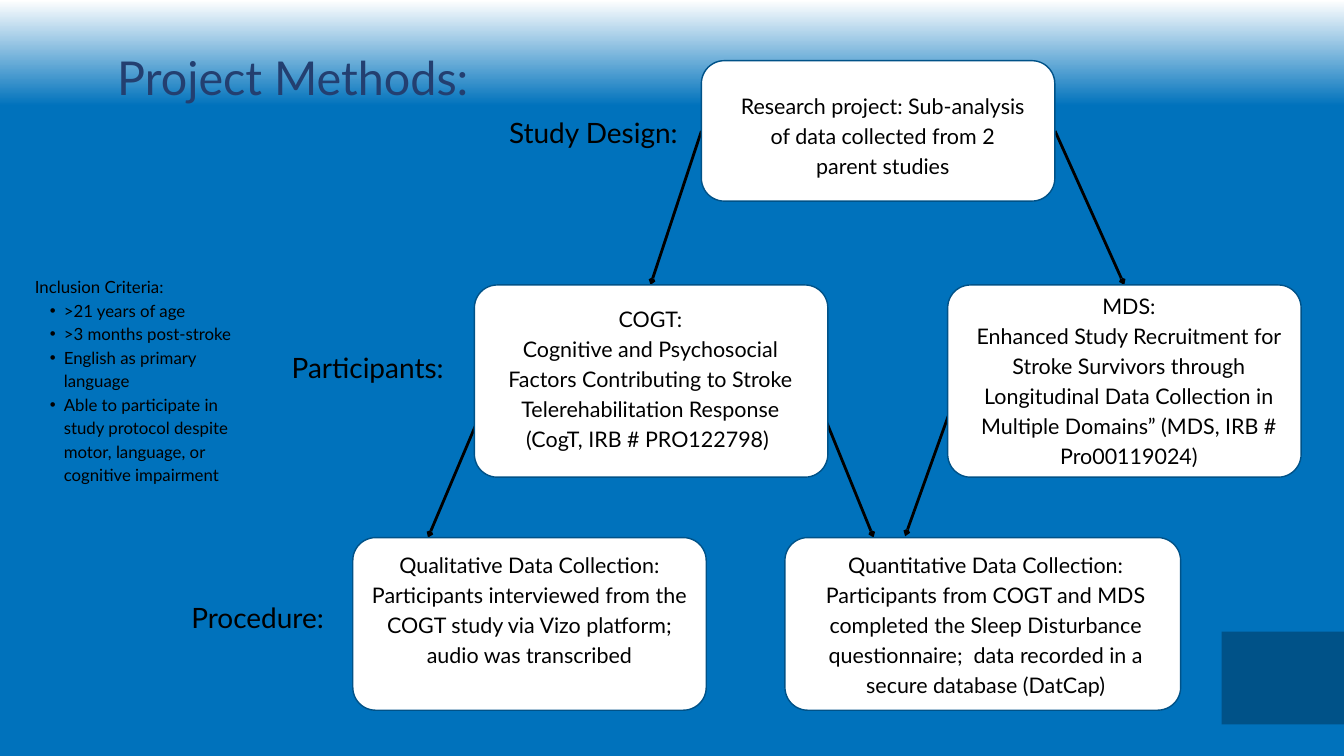
import pptx
import pptx.util
from dataclasses import dataclass
from lxml import etree
from pptx.dml.color import RGBColor
from pptx.enum.shapes import MSO_CONNECTOR, MSO_SHAPE
from pptx.enum.text import MSO_ANCHOR, MSO_AUTO_SIZE, PP_ALIGN
from pptx.oxml.ns import qn

Pt = pptx.util.Pt


@dataclass(frozen=True)
class Theme:
    font: str = "Lato"
    blue: str = "0072BC"
    deep: str = "005288"
    navy: str = "233F70"
    white: str = "FFFFFF"
    black: str = "000000"
    title: float = 50
    label: float = 30
    body: float = 23
    note: float = 18
    lead: float = 1.4  # line height as a share of type size
    round: float = 24.5


THEME = Theme()
CARD = 378.7  # width of a common box

# Each card: box (left, top, width, height), text (left, top, width), lines
CARDS = [
    ((751.5, 65, CARD, 150.5), (792, 95, 308),
     ["Research project: Sub-analysis of data collected from 2 parent studies"]),
    ((508.3, 305.3, CARD, 206), (527.8, 323.3, 338.4),
     ["COGT:", "Cognitive and Psychosocial Factors Contributing to Stroke "
      "Telerehabilitation Response (CogT, IRB # PRO122798) "]),
    ((1015.4, 305.3, CARD, 206), (1030.3, 308.9, 358.6),
     ["MDS:", "Enhanced Study Recruitment for Stroke Survivors through "
      "Longitudinal Data Collection in Multiple Domains” "
      "(MDS, IRB # Pro00119024)"]),
    ((841, 576, 424, 185), (866.9, 586.8, CARD),
     ["Quantitative Data Collection: Participants from COGT and MDS completed "
      "the Sleep Disturbance questionnaire;  data recorded in a secure "
      "database (DatCap)"]),
    ((378, 576, CARD, 185), (398.2, 586.8, 338.4),
     ["Qualitative Data Collection: Participants interviewed from the COGT "
      "study via Vizo platform; audio was transcribed"]),
]

ARROWS = [
    (751.5, 140.4, 697, 305.3),
    (1130.4, 140.4, 1204.6, 305.3),
    (512.6, 448.6, 458.6, 576),
    (877.7, 432.7, 936, 576),
    (1028.9, 409.7, 969.8, 574.6),
]

LABELS = [
    ("Study Design:", 535, 118, 201.6),
    ("Participants: ", 301, 370, 193.7),
    ("Procedure:", 195, 637.2, 162),
]

RULES = [
    ">21 years of age",
    ">3 months post-stroke",
    "English as primary language",
    "Able to participate in study protocol despite motor, language, "
    "or cognitive impairment",
]


def tint(code):
    return RGBColor.from_string(code)


def style(para, size, color=THEME.black, align=PP_ALIGN.CENTER):
    para.alignment = align
    para.line_spacing = Pt(round(size * THEME.lead, 1))
    para.space_before = para.space_after = Pt(0)
    para.font.size = Pt(size)
    para.font.name = THEME.font
    para.font.color.rgb = tint(color)


def place(shape, left, top, width, height):
    shape.left, shape.top = Pt(left), Pt(top)
    shape.width, shape.height = Pt(width), Pt(height)


def clear(frame):
    """Make a frame wrap from its top left corner without margins."""
    frame.word_wrap = True
    frame.auto_size = MSO_AUTO_SIZE.NONE
    frame.vertical_anchor = MSO_ANCHOR.TOP
    frame.margin_left = frame.margin_right = Pt(0)
    frame.margin_top = frame.margin_bottom = Pt(0)


def add_text(slide, lines, left, top, width, height, size,
             align=PP_ALIGN.CENTER, points=()):
    box = slide.shapes.add_textbox(Pt(left), Pt(top), Pt(width), Pt(height))
    frame = box.text_frame
    clear(frame)
    frame.text = "\n".join([*lines, *points])
    for i, para in enumerate(frame.paragraphs):
        if i >= len(lines):
            add_dot(para)
        style(para, size, align=align)


def add_dot(para):
    para.level = 1
    props = para._p.get_or_add_pPr()
    props.set("marL", str(Pt(31)))
    props.set("indent", str(-Pt(15)))
    etree.SubElement(props, qn("a:buFont")).set("typeface", "Arial")
    etree.SubElement(props, qn("a:buChar")).set("char", "•")


def add_box(slide, kind, area, fill, edge=None):
    shape = slide.shapes.add_shape(kind, *map(Pt, area))
    shape.shadow.inherit = False
    shape.fill.solid()
    shape.fill.fore_color.rgb = tint(fill)
    if edge:
        shape.line.color.rgb = tint(edge)
        shape.line.width = Pt(1.5)
    else:
        shape.line.fill.background()
    return shape


def add_card(slide, area, spot, lines):
    card = add_box(slide, MSO_SHAPE.ROUNDED_RECTANGLE, area,
                   THEME.white, THEME.deep)
    card.adjustments[0] = THEME.round / min(area[2:])
    depth = area[1] + area[3] - spot[1]
    add_text(slide, lines, *spot, depth, THEME.body)


def add_arrow(slide, ends):
    line = slide.shapes.add_connector(MSO_CONNECTOR.STRAIGHT, *map(Pt, ends))
    line.line.color.rgb = tint(THEME.black)
    line.line.width = Pt(3)
    props = line._element.spPr
    head = etree.SubElement(props.find(qn("a:ln")), qn("a:tailEnd"))
    for key, value in (("type", "arrow"), ("w", "sm"), ("len", "sm")):
        head.set(key, value)
    etree.SubElement(props, qn("a:effectLst"))


def set_back(slide):
    fill = slide.background.fill
    fill.gradient()
    fill.gradient_angle = 270
    stops = ((0, THEME.white), (0.14, THEME.blue))
    for stop, (pos, color) in zip(fill.gradient_stops, stops):
        stop.position = pos
        stop.color.rgb = tint(color)


def set_title(slide, text):
    title = slide.shapes.title
    place(title, 80.6, 42.5, 466.6, 68.4)
    clear(title.text_frame)
    title.text_frame.text = text
    style(title.text_frame.paragraphs[0], THEME.title, THEME.navy)


def main():
    deck = pptx.Presentation()
    deck.slide_width, deck.slide_height = Pt(1440), Pt(810)
    slide = deck.slides.add_slide(deck.slide_layouts[5])

    # Backdrop and title
    set_back(slide)
    add_box(slide, MSO_SHAPE.RECTANGLE, (1309, 676.8, 131, 99.4), THEME.deep)
    set_title(slide, "Project Methods:")

    # Flow: arrows lie beneath the cards
    for ends in ARROWS:
        add_arrow(slide, ends)
    for area, spot, lines in CARDS:
        add_card(slide, area, spot, lines)

    # Stage labels
    for text, left, top, width in LABELS:
        add_text(slide, [text], left, top, width, 39, THEME.label)

    # Inclusion criteria
    add_text(slide, ["Inclusion Criteria:"], 37.4, 293, 230.4, 221.8,
             THEME.note, PP_ALIGN.LEFT, RULES)

    deck.save("out.pptx")


if __name__ == "__main__":
    main()
